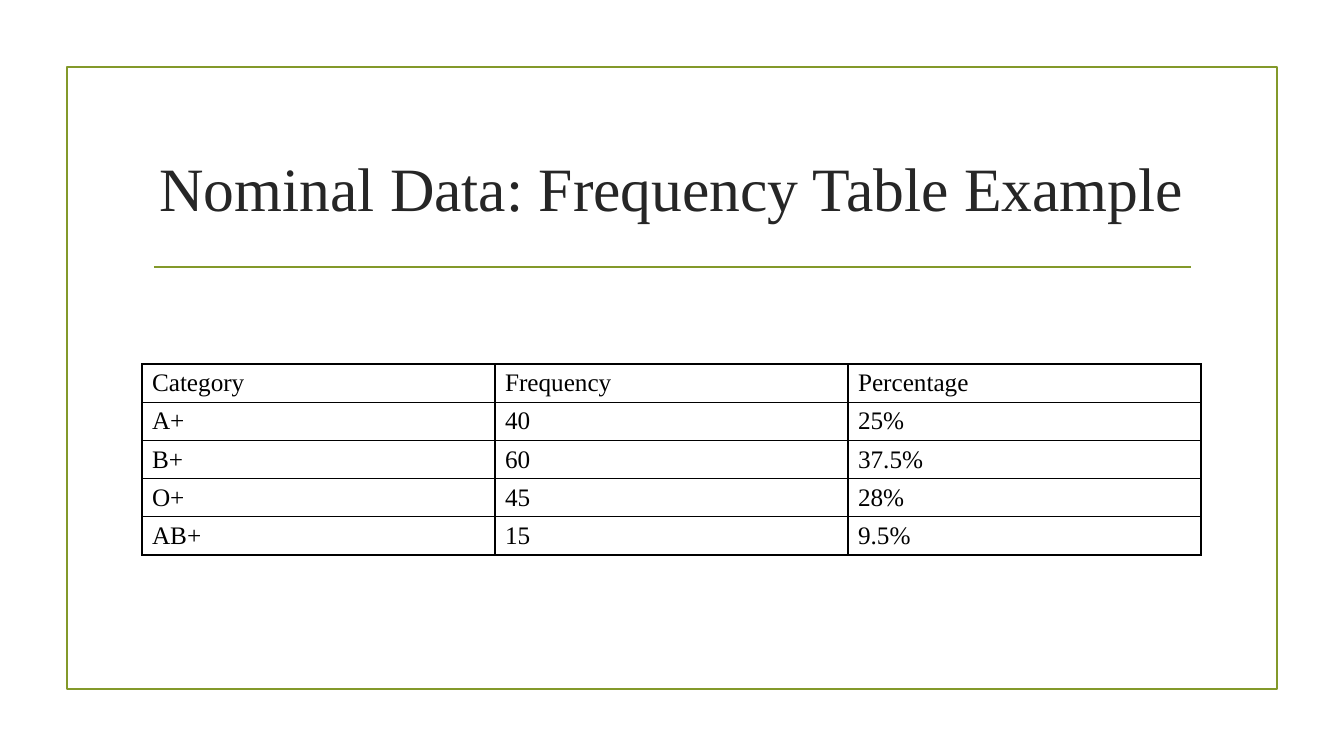
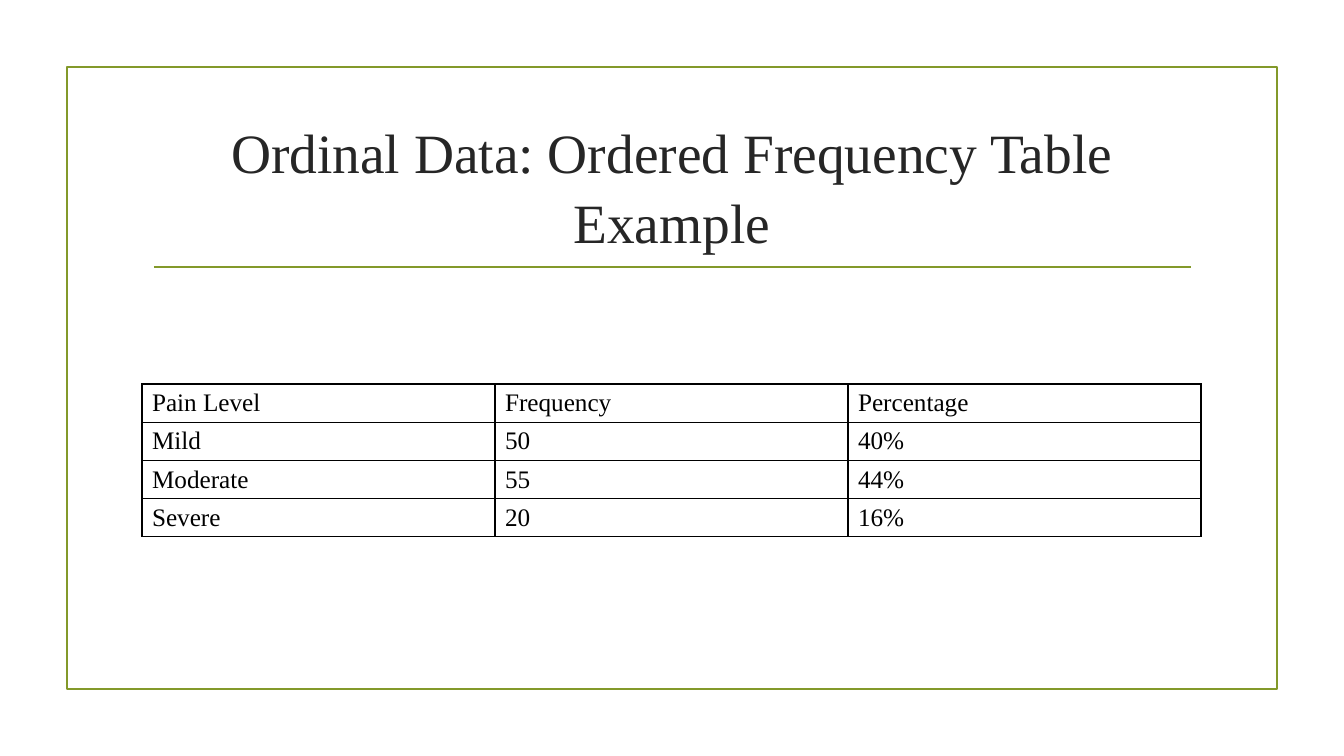
from lxml import etree
from pptx import Presentation
from pptx import util as u
from pptx.dml.color import RGBColor
from pptx.enum import shapes, text
from pptx.oxml import ns

PX = 914400 / 100.8
COLORS = {"accent": "83992A", "title": "262626", "ink": "000000"}
FONT = "Times New Roman"
SLIDES = [
    {
        "title": "Nominal Data: Frequency Table Example",
        "size": 44,
        "rows": [
            ("Category", "Frequency", "Percentage"),
            ("A+", "40", "25%"),
            ("B+", "60", "37.5%"),
            ("O+", "45", "28%"),
            ("AB+", "15", "9.5%"),
        ],
    },
    {
        "title": "Ordinal Data: Ordered Frequency Table Example",
        "size": 39.6,
        "rows": [
            ("Pain Level", "Frequency", "Percentage"),
            ("Mild", "50", "40%"),
            ("Moderate", "55", "44%"),
            ("Severe", "20", "16%"),
        ],
    },
]


def px(*lengths):
    return [u.Emu(round(length * PX)) for length in lengths]


def color(name):
    return RGBColor.from_string(COLORS[name])


def style(target, values):
    for name, value in values.items():
        setattr(target, name, value)


class Deck:
    def __init__(self):
        self.deck = Presentation()
        self.deck.slide_width, self.deck.slide_height = px(1344, 756)
        self.page = None

    def add_page(self):
        self.page = self.deck.slides.add_slide(self.deck.slide_layouts[6])
        self.frame(67, 67, 1210, 622)
        self.rule(154, 1191, 267)

    def outline(self, line):
        line.color.rgb = color("accent")
        line.width = u.Pt(1.25)

    def frame(self, left, top, width, height):
        box = self.page.shapes.add_shape(
            shapes.MSO_SHAPE.RECTANGLE, *px(left, top, width, height))
        box.shadow.inherit = False
        box.fill.background()
        self.outline(box.line)

    def rule(self, left, right, top):
        line = self.page.shapes.add_connector(
            shapes.MSO_CONNECTOR.STRAIGHT, *px(left, top, right, top))
        self.outline(line.line)
        etree.SubElement(line._element.spPr, ns.qn("a:effectLst"))

    def add_words(self, para, words, size, shade):
        span = para.add_run()
        span.text = words
        style(span.font, {"name": FONT, "size": u.Pt(size), "bold": False})
        span.font.color.rgb = color(shade)

    def title(self, words, size):
        box = self.page.shapes.add_textbox(*px(143, 113, 1058, 144))
        style(box.text_frame, {
            "word_wrap": True,
            "vertical_anchor": text.MSO_ANCHOR.MIDDLE,
        })
        para = box.text_frame.paragraphs[0]
        style(para, {"alignment": text.PP_ALIGN.CENTER, "line_spacing": 1.04})
        self.add_words(para, words, size, "title")

    def borders(self, cell):
        props = cell._tc.get_or_add_tcPr()
        for index, side in enumerate(("lnL", "lnR", "lnT", "lnB")):
            line = etree.Element(ns.qn(f"a:{side}"), w=str(int(u.Pt(1))))
            fill = etree.SubElement(line, ns.qn("a:solidFill"))
            etree.SubElement(fill, ns.qn("a:srgbClr"), val=COLORS["ink"])
            props.insert(index, line)

    def table(self, rows, middle=464, pitch=40, row_height=38, column=353):
        count, columns = len(rows), len(rows[0])
        top = middle - count * pitch // 2
        table = self.page.shapes.add_table(
            count, columns,
            *px(142, top, column * columns, row_height * count)).table
        style(table, {"first_row": False, "horz_banding": False})
        margin, = px(4)
        for row, values in zip(table.rows, rows):
            row.height, = px(row_height)
            for cell, value in zip(row.cells, values):
                style(cell, {
                    "vertical_anchor": text.MSO_ANCHOR.MIDDLE,
                    "margin_top": margin,
                    "margin_bottom": margin,
                })
                cell.fill.background()
                self.borders(cell)
                self.add_words(cell.text_frame.paragraphs[0], value, 18, "ink")


def main():
    show = Deck()
    for content in SLIDES:
        show.add_page()
        show.title(content["title"], content["size"])
        show.table(content["rows"])
    show.deck.save("out.pptx")


if __name__ == "__main__":
    main()
